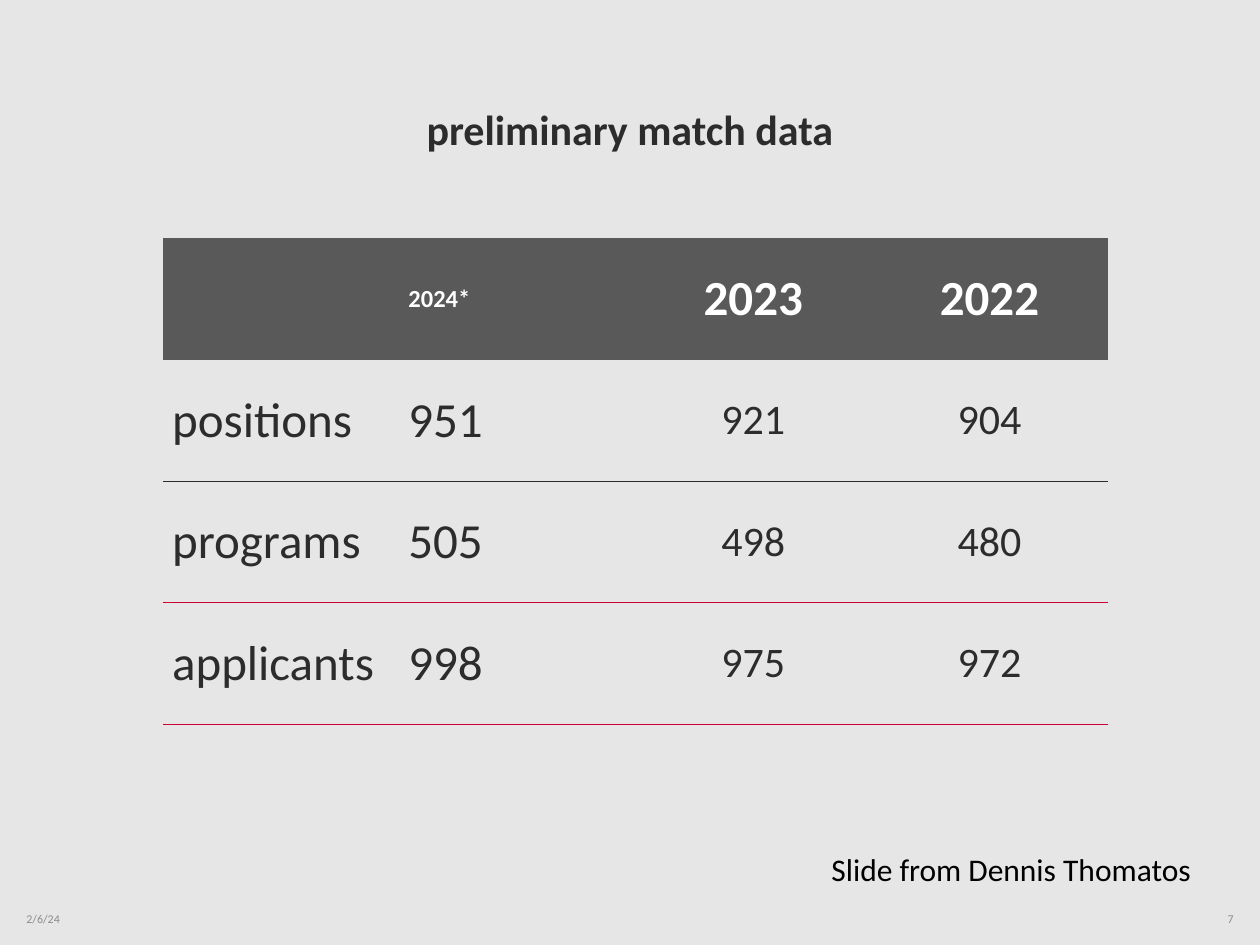
from lxml import etree
from pptx import Presentation
from pptx.dml.color import RGBColor
from pptx.enum.text import MSO_ANCHOR, MSO_AUTO_SIZE, PP_ALIGN
from pptx.oxml.ns import qn
from pptx.util import Pt

LEFT, MID, RIGHT = PP_ALIGN.LEFT, PP_ALIGN.CENTER, PP_ALIGN.RIGHT
CENTRE, TOP = MSO_ANCHOR.MIDDLE, MSO_ANCHOR.TOP
GROW, FIXED = MSO_AUTO_SIZE.SHAPE_TO_FIT_TEXT, MSO_AUTO_SIZE.NONE
INK, GREY, RED, DARK, WHITE = "2C2C2C", "8C8C8C", "CC0033", "595959", "FFFFFF"


def rgb(code):
    return RGBColor.from_string(code)


def assign(item, values):
    for name, value in values.items():
        setattr(item, name, value)


class Deck:
    face = "Calibri"

    def __init__(self, wide, high, back):
        self.file = Presentation()
        assign(self.file, {"slide_width": Pt(wide), "slide_height": Pt(high)})
        self.slide = self.file.slides.add_slide(self.file.slide_layouts[5])
        fill = self.slide.background.fill
        fill.solid()
        fill.fore_color.rgb = rgb(back)

    def put(self, frame, text, size, color, align=LEFT, bold=False):
        frame.text = text
        para = frame.paragraphs[0]
        para.alignment = align
        font = para.runs[0].font
        assign(font, {"name": self.face, "size": Pt(size), "bold": bold})
        font.color.rgb = rgb(color)
        return para

    def title(self, text, box, drop):
        shape = self.slide.shapes.title
        assign(shape, dict(zip(("left", "top", "width", "height"), map(Pt, box))))
        frame = shape.text_frame
        assign(frame, {"margin_top": Pt(drop), "vertical_anchor": CENTRE,
                       "auto_size": FIXED, "word_wrap": True})
        self.put(frame, text, 24, INK, MID, True).line_spacing = 0.9

    def label(self, text, box, size, color, align=LEFT, anchor=CENTRE, wrap=True):
        frame = self.slide.shapes.add_textbox(*map(Pt, box)).text_frame
        assign(frame, {"word_wrap": wrap, "vertical_anchor": anchor,
                       "auto_size": FIXED if wrap else GROW})
        self.put(frame, text, size, color, align)

    def edge(self, cell, side, color):
        line = etree.SubElement(cell._tc.get_or_add_tcPr(), qn("a:ln" + side),
                                w=str(Pt(0.5)))
        if color is None:
            etree.SubElement(line, qn("a:noFill"))
        else:
            fill = etree.SubElement(line, qn("a:solidFill"))
            etree.SubElement(fill, qn("a:srgbClr"), val=color)

    def table(self, rows, box, rules):
        grid = self.slide.shapes.add_table(len(rows), len(rows[0]), *map(Pt, box)).table
        grid.horz_banding = False
        for r, row in enumerate(rows):
            above = rules[r - 1] if r else None
            for c, text in enumerate(row):
                cell = grid.cell(r, c)
                assign(cell, {"margin_left": Pt(5.4), "margin_right": Pt(5.4),
                              "margin_top": Pt(2.7), "margin_bottom": Pt(2.7),
                              "vertical_anchor": CENTRE})
                for side, color in zip("LRTB", (None, None, above, rules[r])):
                    self.edge(cell, side, color)
                # Header row is filled, body rows are clear
                if r == 0:
                    cell.fill.solid()
                    cell.fill.fore_color.rgb = rgb(DARK)
                    size = 14 if c == 1 else 28
                else:
                    cell.fill.background()
                    size = 28 if c < 2 else 24
                if text:
                    self.put(cell.text_frame, text, size, INK if r else WHITE,
                             LEFT if c < 2 else MID, r == 0)


def main():
    deck = Deck(720, 540, "E7E6E6")

    # Date and slide number
    deck.label("2/6/24", (8, 510.5, 162, 28.8), 6.8, GREY)
    deck.label("7", (550, 510.5, 162, 28.8), 6.8, GREY, RIGHT)

    # Match table
    rows = (("", "2024*", "2023", "2022"),
            ("positions", "951", "921", "904"),
            ("programs", "505", "498", "480"),
            ("applicants", "998", "975", "972"))
    deck.table(rows, (93, 136, 540, 277.8), (None, INK, RED, RED))

    # Title and credit
    deck.title("preliminary match data", (50, 9.5, 620, 106.5), 29)
    deck.label("Slide from Dennis Thomatos", (468, 482, 222.5, 29), 18, "000000",
               anchor=TOP, wrap=False)

    deck.file.save("out.pptx")


if __name__ == "__main__":
    main()
